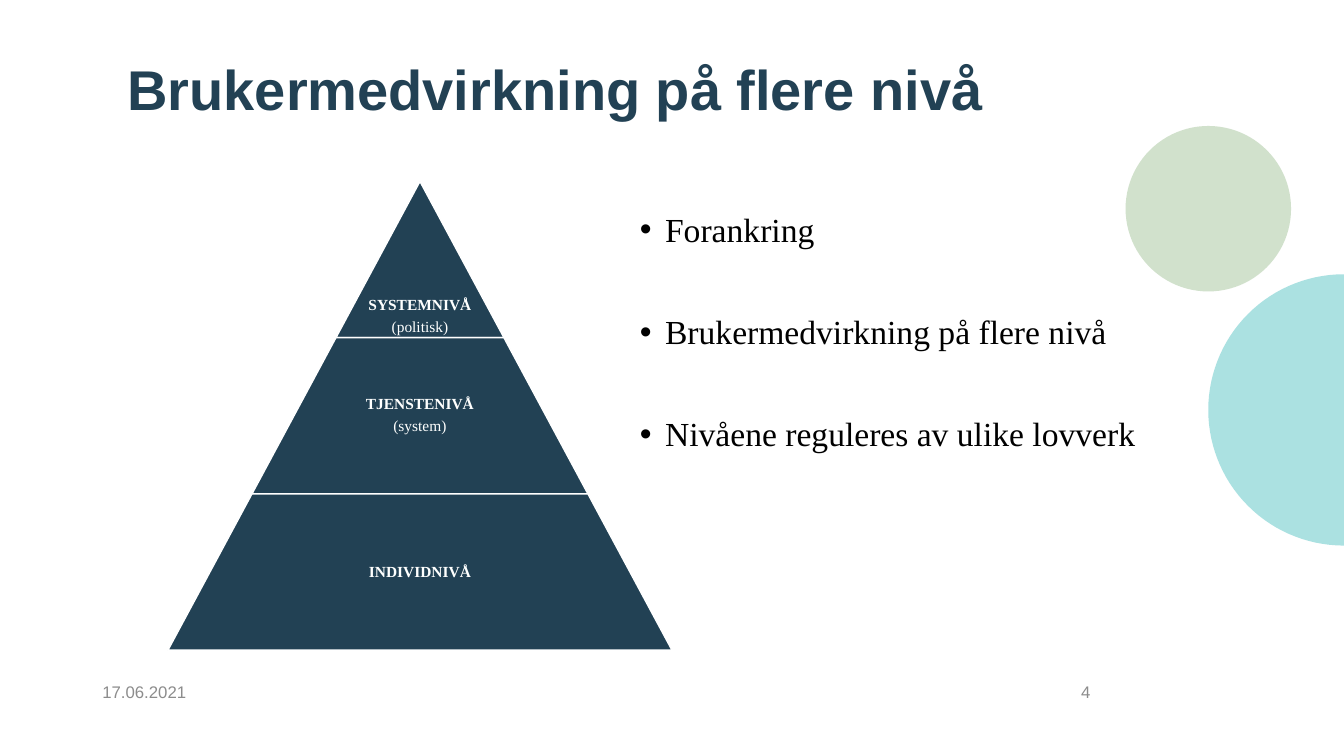
import math
from lxml import etree
from pptx import Presentation
from pptx import util as u
from pptx.dml.color import RGBColor
from pptx.enum import shapes, text
from pptx.oxml import ns

NAVY = RGBColor(0x22, 0x41, 0x54)
GREEN = RGBColor(0x76, 0xA5, 0x65)
TEAL = RGBColor(0x00, 0xA5, 0xA6)
GREY = RGBColor(0x8C, 0x8C, 0x8C)
BLACK = RGBColor(0, 0, 0)
WHITE = RGBColor(0xFF, 0xFF, 0xFF)
LABEL_WHITE = RGBColor(0xFE, 0xFF, 0xFE)

deck = Presentation()
deck.slide_width, deck.slide_height = u.Inches(13.333), u.Inches(7.5)
slide = deck.slides.add_slide(deck.slide_layouts[6])
COLUMNS, ROWS = 160, 90
CELL = deck.slide_width / COLUMNS


def grid(*cells):
    return [round(cell * CELL) for cell in cells]


def add_text(box, lines, font_name, size, color, anchor=text.MSO_ANCHOR.MIDDLE,
             align=text.PP_ALIGN.LEFT, bold=False, spacing=1.0, gap=0, inset=None, bullet=False):
    frame = slide.shapes.add_textbox(*grid(*box)).text_frame
    frame.word_wrap = True
    frame.vertical_anchor = anchor
    if inset is not None:
        frame.margin_left = frame.margin_right = u.Inches(inset)
        frame.margin_top = frame.margin_bottom = u.Inches(inset)
    for index, line in enumerate(lines):
        paragraph = frame.add_paragraph() if index else frame.paragraphs[0]
        paragraph.text = line
        paragraph.alignment = align
        paragraph.line_spacing = spacing
        paragraph.space_before = u.Pt(gap if index else 0)
        if bullet:
            properties = paragraph._p.get_or_add_pPr()
            properties.set("marL", str(u.Inches(0.25)))
            properties.set("indent", str(-u.Inches(0.25)))
            etree.SubElement(properties, ns.qn("a:buFont")).set("typeface", "Arial")
            etree.SubElement(properties, ns.qn("a:buChar")).set("char", "•")
        font = paragraph.font
        font.name, font.size, font.bold = font_name, u.Pt(size), bold and index == 0
        font.color.rgb = color


green_circle = slide.shapes.add_shape(shapes.MSO_SHAPE.OVAL, *grid(134, 15, 19.7, 19.7))

RADIUS, CENTER_ROW, STEPS = 16.15, 48.8, 60
arc = [grid(COLUMNS - RADIUS * math.sin(math.pi * step / STEPS),
            CENTER_ROW - RADIUS * math.cos(math.pi * step / STEPS))
       for step in range(STEPS + 1)]
outline = slide.shapes.build_freeform(*arc[0])
outline.add_line_segments(arc[1:], close=True)
teal_half = outline.convert_to_shape()

for circle, color in ((green_circle, GREEN), (teal_half, TEAL)):
    circle.shadow.inherit = False
    circle.line.fill.background()
    circle.fill.solid()
    circle.fill.fore_color.rgb = color
    tint = circle._element.spPr.find(".//" + ns.qn("a:srgbClr"))
    etree.SubElement(tint, ns.qn("a:alpha")).set("val", "33000")

add_text((14, 2.3, 138, 17.4), ["Brukermedvirkning på flere nivå"],
         "Arial", 40, NAVY, bold=True, spacing=0.9)
add_text((75, 24.8, 64, 44.3),
         ["Forankring", "Brukermedvirkning på flere nivå", "Nivåene reguleres av ulike lovverk"],
         "Times New Roman", 24, BLACK, anchor=text.MSO_ANCHOR.TOP,
         spacing=0.9, gap=47, bullet=True)
add_text((11, 80, 36, 4.8), ["17.06.2021"], "Arial", 12, GREY)
add_text((113, 80, 18, 4.8), ["4"], "Arial", 12, GREY, align=text.PP_ALIGN.RIGHT)

levels = [["SYSTEMNIVÅ", "(politisk)"], ["TJENSTENIVÅ", "(system)"], ["INDIVIDNIVÅ"]]
PYRAMID_CENTER, PYRAMID_TOP, TIER_HEIGHT, TIER_SLOPE = 50, 21.6, 18.6, 10
for tier, labels in enumerate(levels):
    top = PYRAMID_TOP + tier * TIER_HEIGHT
    width = 2 * TIER_SLOPE * (tier + 1)
    level = slide.shapes.add_shape(
        shapes.MSO_SHAPE.TRAPEZOID,
        *grid(PYRAMID_CENTER - width / 2, top, width, TIER_HEIGHT))
    level.adjustments[0] = TIER_SLOPE / TIER_HEIGHT
    level.shadow.inherit = False
    level.fill.solid()
    level.fill.fore_color.rgb = NAVY
    level.line.color.rgb = WHITE
    level.line.width = u.Pt(1)
    label_width = max(2 * TIER_SLOPE, 0.65 * width)
    add_text((PYRAMID_CENTER - label_width / 2, top, label_width, TIER_HEIGHT), labels,
             "Times New Roman", 11, LABEL_WHITE,
             anchor=text.MSO_ANCHOR.MIDDLE if tier else text.MSO_ANCHOR.BOTTOM,
             align=text.PP_ALIGN.CENTER, bold=True, spacing=0.9, gap=4, inset=0.02)

deck.save("out.pptx")
